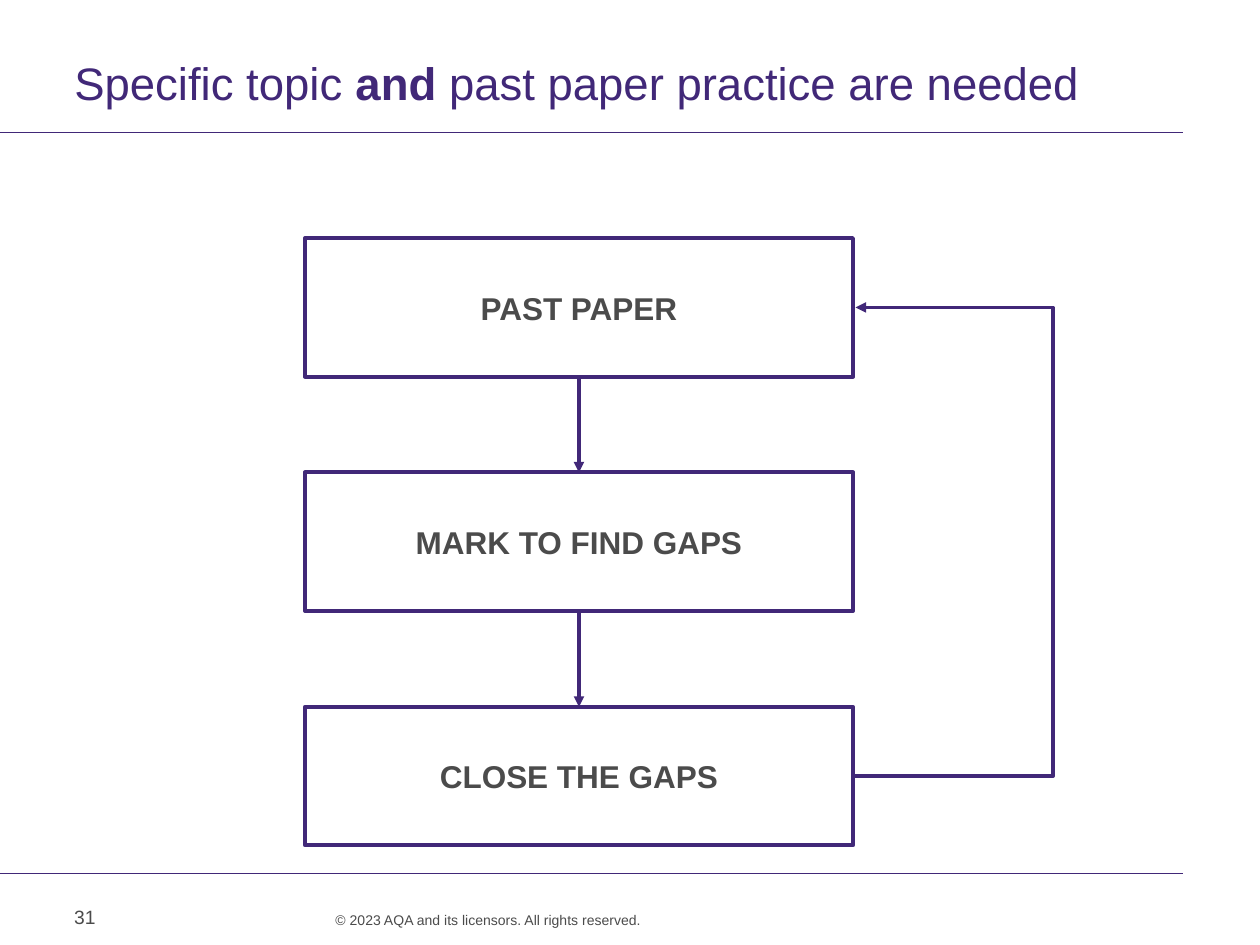
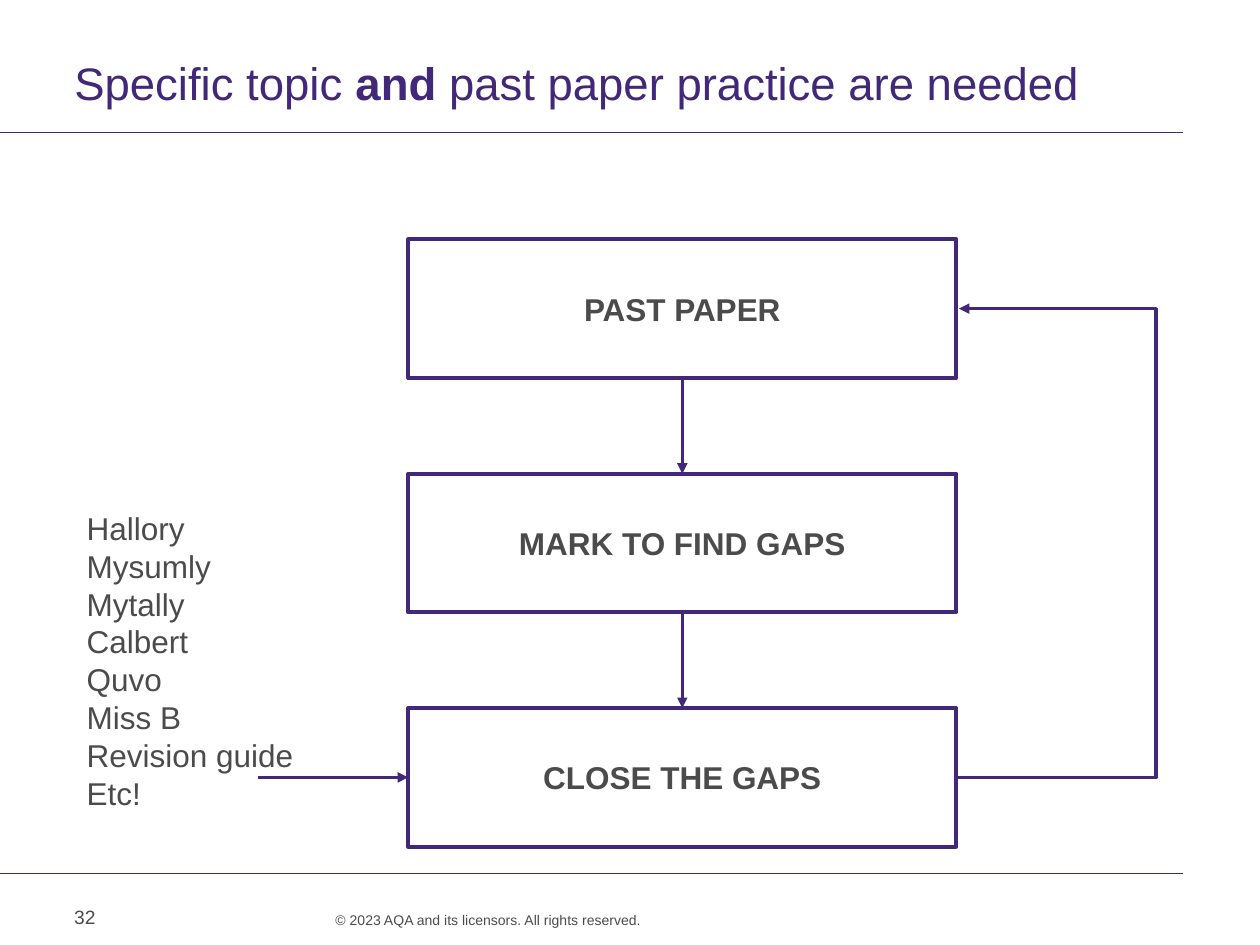
from dataclasses import dataclass
from itertools import pairwise

from lxml.etree import SubElement
from pptx import Presentation
from pptx.dml.color import RGBColor
from pptx.enum.shapes import MSO_CONNECTOR as Connector, MSO_SHAPE as Shape
from pptx.enum.text import MSO_ANCHOR as Anchor, MSO_AUTO_SIZE as AutoSize, PP_ALIGN as Align
from pptx.oxml.ns import qn
from pptx.util import Emu, Pt

EMU_PER_PX = 9144  # 100 px to the inch


@dataclass(frozen=True)
class Theme:
    font: str = "Arial"
    purple: RGBColor = RGBColor(0x41, 0x28, 0x78)
    grey: RGBColor = RGBColor(0x4B, 0x4B, 0x4B)
    title_size: float = 26
    body_size: float = 18
    number_size: float = 11
    copyright_size: float = 8
    rule_width: float = 0.6
    arrow_width: float = 2
    box_width: float = 2.25


THEME = Theme()
TITLE = (("Specific topic ", False), ("and", True), (" past paper practice are needed", False))
COPYRIGHT = "© 2023 AQA and its licensors. All rights reserved."
STEPS = ("PAST PAPER", "MARK TO FIND GAPS", "CLOSE THE GAPS")
RESOURCES = ("Hallory", "Mysumly", "Mytally", "Calbert", "Quvo", "Miss B",
             "Revision guide", "Etc!")

BOX_WIDTH, BOX_HEIGHT, STEP_PITCH = 435, 110, 186
LOOP_REACH, LOOP_END = 158, 2
TOP_SITE, LEFT_SITE, BOTTOM_SITE = 0, 1, 2


def px(value):
    return Emu(value * EMU_PER_PX)


def format_font(font, size, color, bold=False):
    font.name, font.size, font.bold = THEME.font, Pt(size), bold
    font.color.rgb = color


def add_line(slide, start, end, width, kind=Connector.STRAIGHT, arrow=False):
    line = slide.shapes.add_connector(kind, *map(px, (*start, *end)))
    line.line.color.rgb = THEME.purple
    line.line.width = Pt(width)
    if arrow:
        SubElement(line.line._get_or_add_ln(), qn("a:tailEnd"), type="triangle")
    SubElement(line._element.spPr, qn("a:effectLst"))
    return line


def add_text(slide, bounds, lines, size, align=Align.LEFT, spacing=None,
             anchor=Anchor.TOP, inset=True):
    frame = slide.shapes.add_textbox(*map(px, bounds)).text_frame
    frame.word_wrap = True
    frame.vertical_anchor = anchor
    if not inset:
        frame.margin_left = frame.margin_top = frame.margin_right = frame.margin_bottom = 0
    frame.text = "\n".join(lines)
    for paragraph in frame.paragraphs:
        paragraph.alignment = align
        if spacing:
            paragraph.line_spacing = Pt(spacing)
        format_font(paragraph.font, size, THEME.grey)


def set_title(slide):
    title = slide.shapes.title
    title.left, title.top, title.width, title.height = map(px, (59, 48, 880, 47))
    frame = title.text_frame
    frame.auto_size = AutoSize.NONE
    frame.vertical_anchor = Anchor.TOP
    frame.margin_left = frame.margin_top = frame.margin_bottom = 0
    paragraph = frame.paragraphs[0]
    paragraph.alignment = Align.LEFT
    paragraph.line_spacing = Pt(28)
    for text, bold in TITLE:
        run = paragraph.add_run()
        run.text = text
        format_font(run.font, THEME.title_size, THEME.purple, bold)


def add_titled_slide(presentation, number):
    """Add a slide with the shared title, rules and footer."""
    slide = presentation.slides.add_slide(presentation.slide_layouts.get_by_name("Title Only"))
    for y in (105, 693):
        add_line(slide, (0, y), (939, y), THEME.rule_width)
    set_title(slide)
    add_text(slide, (167, 723, 342, 26), [COPYRIGHT], THEME.copyright_size,
             Align.RIGHT, spacing=10, inset=False)
    add_text(slide, (49, 708, 76, 40), [str(number)], THEME.number_size, anchor=Anchor.MIDDLE)
    return slide


def add_step(slide, left, top, label):
    box = slide.shapes.add_shape(Shape.RECTANGLE, *map(px, (left, top, BOX_WIDTH, BOX_HEIGHT)))
    box.shadow.inherit = False
    box.fill.background()
    box.line.color.rgb = THEME.purple
    box.line.width = Pt(THEME.box_width)
    frame = box.text_frame
    frame.text = label
    frame.vertical_anchor = Anchor.MIDDLE
    paragraph = frame.paragraphs[0]
    paragraph.alignment = Align.CENTER
    format_font(paragraph.font, THEME.body_size, THEME.grey, bold=True)
    return box


def add_cycle(slide, left, top):
    """Stack the steps, join them downwards and loop from last to first; return the boxes."""
    boxes = [add_step(slide, left, top + index * STEP_PITCH, label)
             for index, label in enumerate(STEPS)]
    for upper, lower in pairwise(boxes):
        arrow = add_line(slide, (left, top), (left, top), THEME.arrow_width, arrow=True)
        arrow.begin_connect(upper, BOTTOM_SITE)
        arrow.end_connect(lower, TOP_SITE)

    right = left + BOX_WIDTH
    first_middle = top + BOX_HEIGHT // 2
    last_middle = first_middle + (len(STEPS) - 1) * STEP_PITCH
    loop = add_line(slide, (right, last_middle), (right + LOOP_END, first_middle),
                    THEME.arrow_width, Connector.ELBOW, arrow=True)
    bend = LOOP_REACH * 100000 // LOOP_END
    guides = loop._element.spPr.find(qn("a:prstGeom")).get_or_add_avLst()
    SubElement(guides, qn("a:gd"), name="adj1", fmla=f"val {bend}")
    return boxes


def add_resources(slide, target):
    arrow = add_line(slide, (205, 617), (324, 617), THEME.arrow_width, arrow=True)
    arrow.end_connect(target, LEFT_SITE)
    add_text(slide, (59, 399, 500, 252), RESOURCES, THEME.body_size, spacing=21.6)


def main():
    presentation = Presentation()
    presentation.slide_width, presentation.slide_height = px(1000), px(750)

    add_cycle(add_titled_slide(presentation, 31), 242, 189)

    resources_slide = add_titled_slide(presentation, 32)
    boxes = add_cycle(resources_slide, 324, 190)
    add_resources(resources_slide, boxes[-1])

    presentation.save("out.pptx")


if __name__ == "__main__":
    main()
